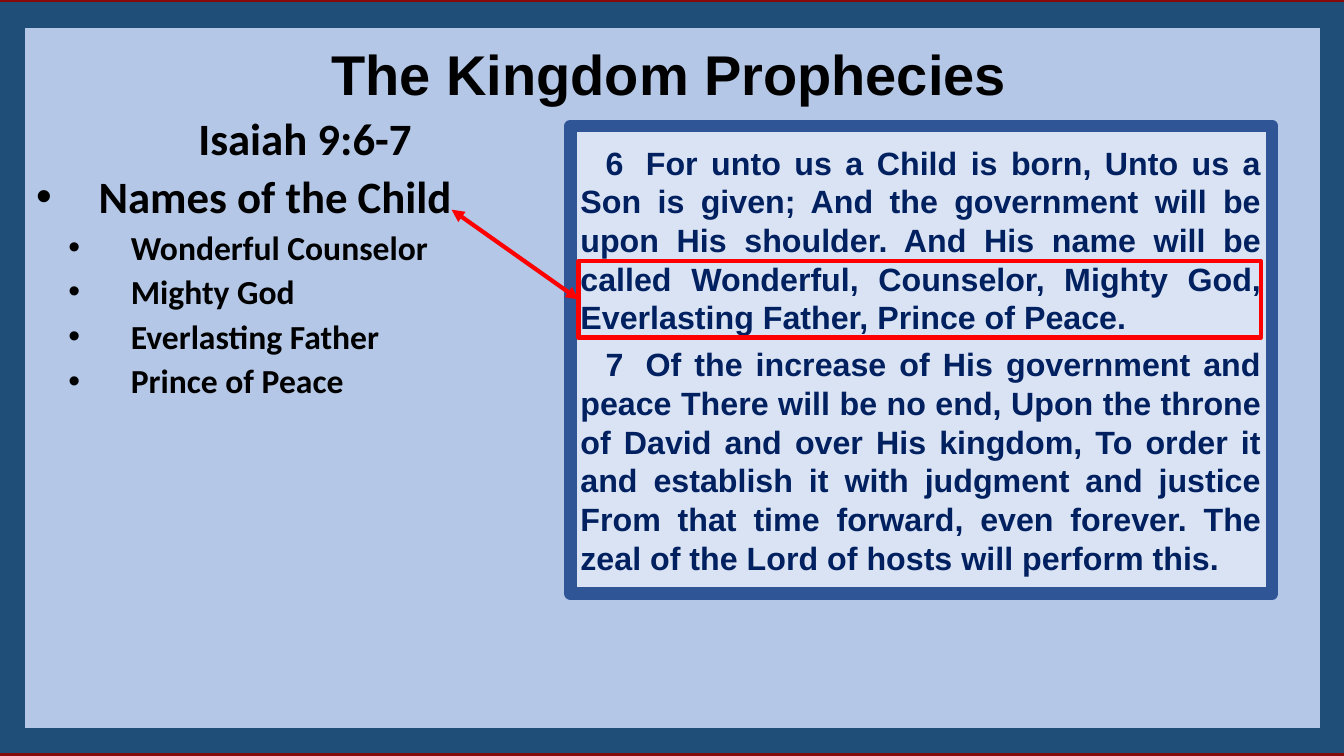
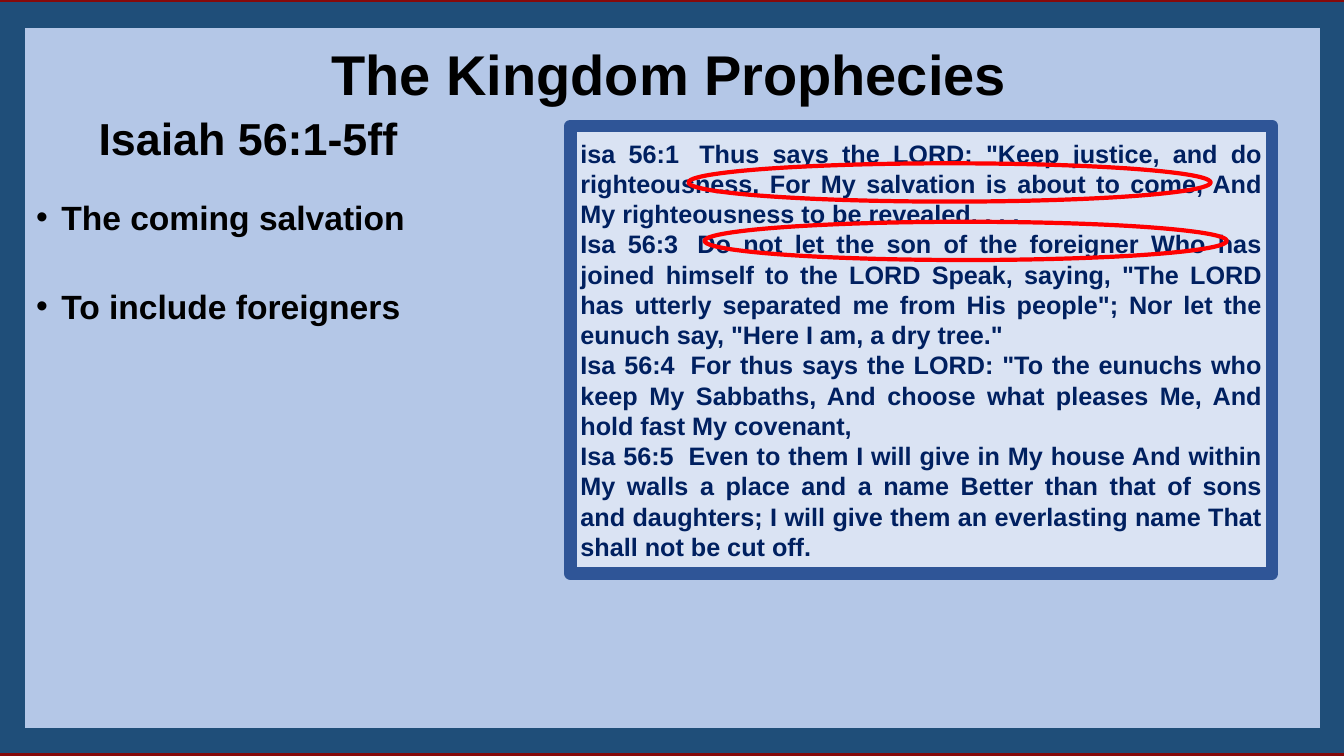
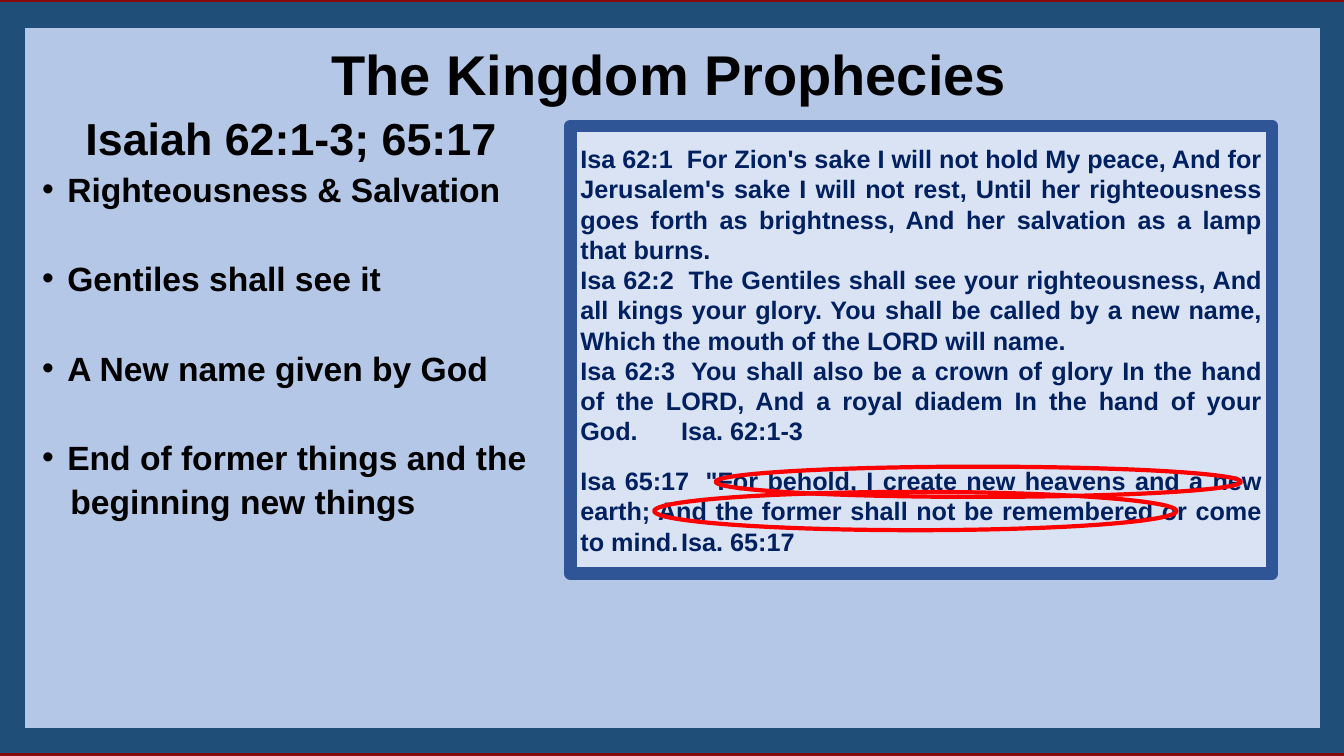
from lxml import etree
from pptx import Presentation
from pptx import util as u
from pptx.dml.color import RGBColor
from pptx.enum import shapes, text
from pptx.oxml.ns import qn

PX = 9144  # 100 px to the inch
RED = RGBColor(0xFF, 0x00, 0x00)
MAROON = RGBColor(0x86, 0x0A, 0x0A)
BLACK = RGBColor(0x00, 0x00, 0x00)
NAVY = RGBColor(0x00, 0x20, 0x60)
STEEL = RGBColor(0x1F, 0x4E, 0x79)
BLUE = RGBColor(0x2F, 0x55, 0x97)
SKY = RGBColor(0xB4, 0xC7, 0xE7)
PALE = RGBColor(0xDA, 0xE3, 0xF3)
BOX, OVAL = shapes.MSO_SHAPE.RECTANGLE, shapes.MSO_SHAPE.OVAL
ALIGN = text.PP_ALIGN

# points: (words, size, left margin, first indent, bullet, space before)
# verses: (words, space before)
SLIDES = [
    dict(
        face="Calibri",
        points=[
            ("Isaiah 9:6-7", 32, 161, 0, False, 0),
            ("Names of the Child", 32, 62, -62, True, 3),
            ("Wonderful Counselor", 24, 94, -62, True, 3),
            ("Mighty God", 24, 94, -62, True, 3),
            ("Everlasting Father", 24, 94, -62, True, 3),
            ("Prince of Peace", 24, 94, -62, True, 3),
        ],
        tall=464, size=23, indent=25,
        verses=[
            ("6\u00a0 For unto us a Child is born, Unto us a Son is given; And the government "
             "will be upon His shoulder. And His name will be called Wonderful, Counselor, "
             "Mighty God, Everlasting Father, Prince of Peace.", 0),
            ("7\u00a0 Of the increase of His government and peace There will be no end, Upon the "
             "throne of David and over His kingdom, To order it and establish it with judgment "
             "and justice From that time forward, even forever. The zeal of the Lord of hosts "
             "will perform this.", 6),
        ],
        marks=[(BOX, 574, 259, 677, 76)],
        arrow=(448, 208),
    ),
    dict(
        face="Arial",
        points=[
            ("Isaiah 56:1-5ff", 32, 62, 0, False, 0),
            ("The coming salvation", 24, 25, -25, True, 23),
            ("To include foreigners", 24, 25, -25, True, 35),
        ],
        tall=444, size=18, indent=0,
        verses=[
            ('isa 56:1\u00a0 Thus says the LORD: "Keep justice, and do righteousness, For My '
             "salvation is about to come, And My righteousness to be revealed. . . .", 0),
            ("Isa 56:3\u00a0 Do not let the son of the foreigner Who has joined himself to the "
             'LORD Speak, saying, "The LORD has utterly separated me from His people"; Nor let '
             'the eunuch say, "Here I am, a dry tree."', 0),
            ('Isa 56:4\u00a0 For thus says the LORD: "To the eunuchs who keep My Sabbaths, And '
             "choose what pleases Me, And hold fast My covenant,", 0),
            ("Isa 56:5\u00a0 Even to them I will give in My house And within My walls a place "
             "and a name Better than that of sons and daughters; I will give them an "
             "everlasting name That shall not be cut off.", 0),
        ],
        marks=[(OVAL, 683, 162, 518, 38), (OVAL, 699, 220, 518, 38)],
        arrow=None,
    ),
    dict(
        face="Arial",
        points=[
            ("Isaiah 62:1-3; 65:17", 32, 49, 0, False, 0),
            ("Righteousness & Salvation", 24, 31, -25, True, 3),
            ("Gentiles shall see it", 24, 31, -25, True, 35),
            ("A New name given by God", 24, 31, -25, True, 35),
            ("End of former things and the", 24, 31, -25, True, 35),
            ("beginning new things", 24, 34, 0, False, 3),
        ],
        tall=444, size=18, indent=0,
        verses=[
            ("Isa 62:1\u00a0 For Zion's sake I will not hold My peace, And for Jerusalem's sake "
             "I will not rest, Until her righteousness goes forth as brightness, And her "
             "salvation as a lamp that burns.", 0),
            ("Isa 62:2\u00a0 The Gentiles shall see your righteousness, And all kings your "
             "glory. You shall be called by a new name, Which the mouth of the LORD will name.",
             0),
            ("Isa 62:3\u00a0 You shall also be a crown of glory In the hand of the LORD, And a "
             "royal diadem In the hand of your God.\tIsa. 62:1-3", 0),
            ('Isa 65:17\u00a0 "For behold, I create new heavens and a new earth; And the former '
             "shall not be remembered or come to mind.\tIsa. 65:17", 14),
        ],
        marks=[(OVAL, 649, 488, 518, 38), (OVAL, 710, 463, 521, 30)],
        arrow=None,
    ),
]


def draw(slide, kind, spot, fill, line, width):
    shape = slide.shapes.add_shape(kind, *[n * PX for n in spot])
    shape.shadow.inherit = False
    if fill is None:
        shape.fill.background()
    else:
        shape.fill.solid()
        shape.fill.fore_color.rgb = fill
    shape.line.color.rgb = line
    shape.line.width = u.Pt(width)
    return shape


def write(para, words, face, size, color, align, left=0, first=0, bullet=False, gap=0, tab=0):
    """Fill a bold paragraph whose lines are 1.2 times the text size apart."""
    para.text = words
    form = dict(alignment=align, line_spacing=u.Pt(round(size * 1.2, 1)),
                space_before=u.Pt(gap), space_after=u.Pt(0))
    for name, value in form.items():
        setattr(para, name, value)
    props = para._p.get_or_add_pPr()
    props.set("marL", str(left * PX))
    props.set("indent", str(first * PX))
    if bullet:
        etree.SubElement(props, qn("a:buFont"), typeface="Arial")
        etree.SubElement(props, qn("a:buChar"), char="•")
    else:
        etree.SubElement(props, qn("a:buNone"))
    if tab:
        stops = etree.SubElement(props, qn("a:tabLst"))
        etree.SubElement(stops, qn("a:tab"), pos=str(tab * PX), algn="l")
    font = para.runs[0].font
    for name, value in dict(name=face, size=u.Pt(size), bold=True).items():
        setattr(font, name, value)
    font.color.rgb = color


deck = Presentation()
deck.slide_width, deck.slide_height = u.Inches(13.333), u.Inches(7.5)
back = deck.slide_master.background.fill
back.solid()
back.fore_color.rgb = MAROON
layout = deck.slide_layouts[5]

for page in SLIDES:
    slide = deck.slides.add_slide(layout)

    title = slide.shapes.title
    panel = draw(slide, BOX, (12, 15, 1310, 720), SKY, STEEL, 18)
    etree.SubElement(panel.element.spPr.find(qn("a:ln")), qn("a:miter"), lim="800000")
    title.element.addprevious(panel.element)

    spot = dict(left=26, top=34, width=1275, height=77)
    for name, value in spot.items():
        setattr(title, name, value * PX)
    title.text_frame.vertical_anchor = text.MSO_ANCHOR.TOP
    title.text_frame.auto_size = text.MSO_AUTO_SIZE.NONE
    write(title.text_frame.paragraphs[0], "The Kingdom Prophecies", "Arial", 40, BLACK,
          ALIGN.CENTER)

    body = slide.shapes.add_textbox(26 * PX, 105 * PX, 530 * PX, 420 * PX).text_frame
    body.word_wrap = True
    for i, (words, size, left, first, bullet, gap) in enumerate(page["points"]):
        para = body.add_paragraph() if i else body.paragraphs[0]
        write(para, words, page["face"], size, BLACK, ALIGN.LEFT, left, first, bullet, gap)

    quote = draw(slide, BOX, (566, 125, 696, page["tall"]), PALE, BLUE, 9).text_frame
    quote.word_wrap = True
    quote.vertical_anchor = text.MSO_ANCHOR.MIDDLE
    for i, (words, gap) in enumerate(page["verses"]):
        para = quote.add_paragraph() if i else quote.paragraphs[0]
        write(para, words, "Arial", page["size"], NAVY, ALIGN.JUSTIFY, first=page["indent"],
              gap=gap, tab=400 if "\t" in words else 0)

    for kind, *spot in page["marks"]:
        mark = draw(slide, kind, spot, None, RED, 3)

    if page["arrow"]:
        x, y = [n * PX for n in page["arrow"]]
        arrow = slide.shapes.add_connector(shapes.MSO_CONNECTOR.STRAIGHT, x, y, x, y)
        arrow.end_connect(mark, 1)
        arrow.line.color.rgb = RED
        arrow.line.width = u.Pt(3)
        props = arrow.element.spPr
        for end in ("a:headEnd", "a:tailEnd"):
            etree.SubElement(props.find(qn("a:ln")), qn(end), type="triangle")
        etree.SubElement(props, qn("a:effectLst"))

deck.save("out.pptx")
